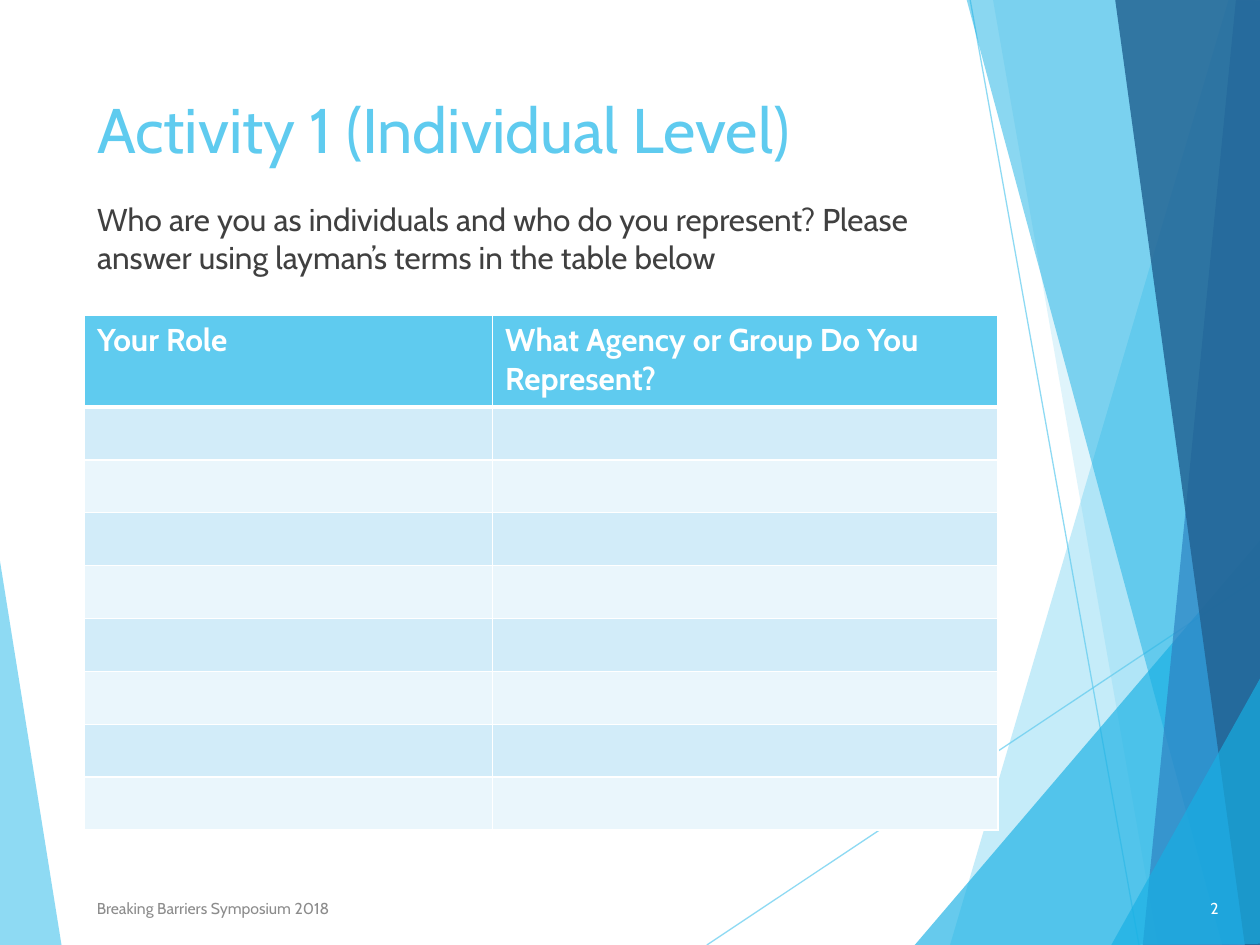
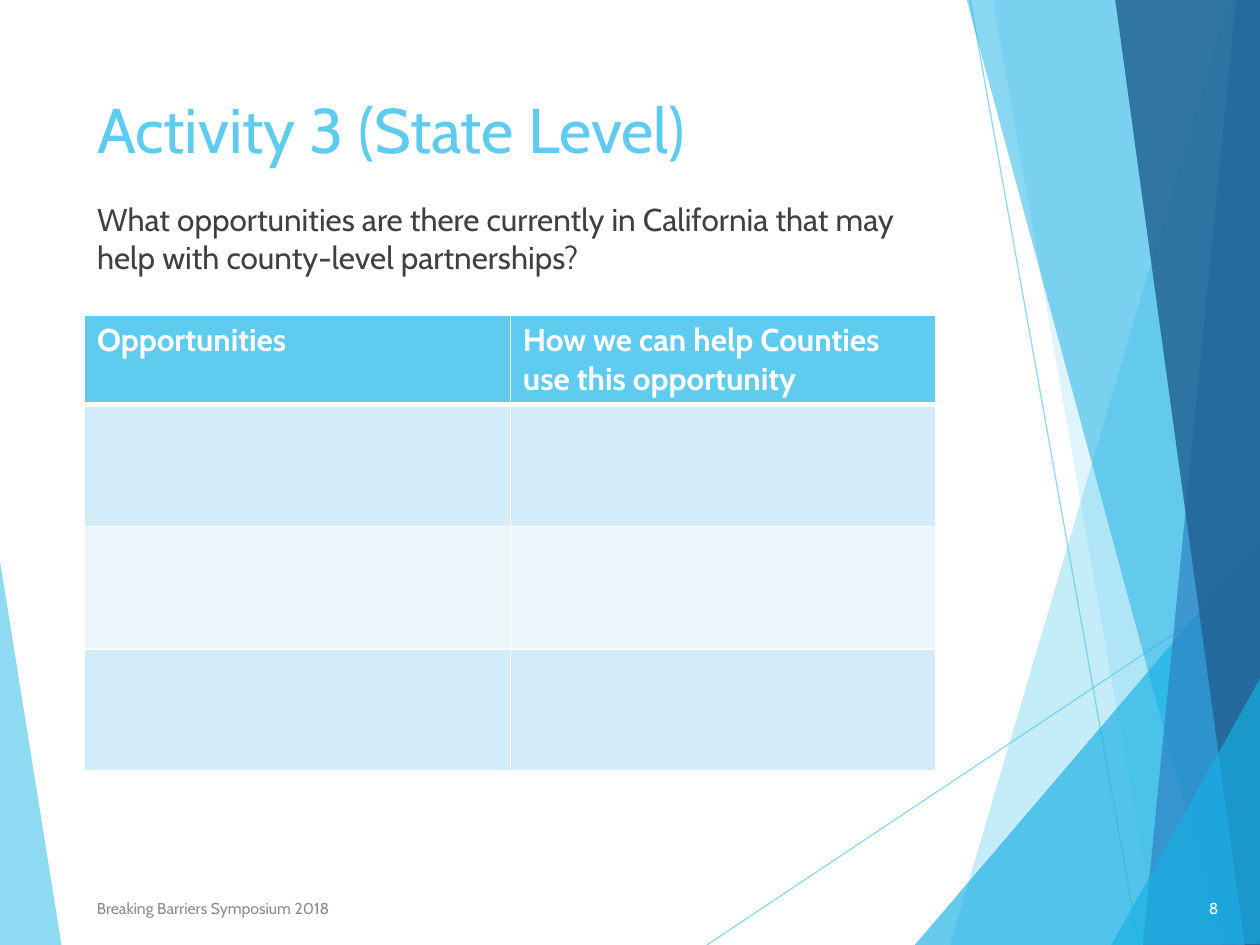
from lxml.etree import SubElement
from pptx import Presentation
from pptx.dml.color import RGBColor
from pptx.enum.text import MSO_ANCHOR as Anchor, MSO_AUTO_SIZE as AutoSize, PP_ALIGN as Align
from pptx.oxml.ns import qn
from pptx.util import Inches, Pt

COLORS = {
    "sky": "5FCBEF", "cyan": "17B0E4", "blue": "2E83C3", "navy": "226292",
    "white": "FFFFFF", "body": "404040", "footer": "8C8C8C",
    "odd_row": "D2ECF9", "even_row": "EAF6FC",
}
FORMATS = {
    "title": {"size": Pt(36), "color": "sky"},
    "body": {"size": Pt(18), "color": "body"},
    "header": {"size": Pt(18), "color": "white", "bold": True},
    "footer": {"size": Pt(9), "color": "footer"},
    "number": {"size": Pt(9), "color": "white"},
}
LEFT = 0.67

# Decorative bands, back to front: colour, opacity in percent, corners in inches
LEFT_BAND = ("sky", 70, [(-0.01, 4.39), (0.49, 7.51), (-0.01, 7.5)])
RIGHT_BANDS = [
    ("sky", 36, [(9.75, 0), (7.54, 7.5), (10.02, 7.51), (10.01, 0.01)]),
    ("sky", 20, [(7.88, -0.01), (9.19, 7.5), (10.01, 7.5), (10.01, -0.01)]),
    ("cyan", 66, [(7.26, 7.5), (10, 4.29), (10.01, 7.5)]),
    ("cyan", 50, [(7.67, -0.01), (9.7, 7.5), (10.01, 7.49), (10.01, -0.01)]),
    ("blue", 70, [(9.81, -0.01), (9.07, 7.5), (10.01, 7.5), (10, -0.01)]),
    ("navy", 82, [(8.85, -0.01), (9.88, 7.5), (10.02, 7.5), (10, -0.01)]),
    ("cyan", 66, [(8.82, 7.5), (10.02, 5.35), (10.02, 7.49)]),
]
THIN_LINES = [((5.61, 7.5), (10.01, 4.57)), ((7.7, 0), (9.04, 7.5))]

SLIDES = [
    {
        "title": "Activity 1 (Individual Level)",
        "number": "2",
        "question": "Who are you as individuals and who do you represent? "
                    "Please answer using layman’s terms in the table below",
        "headers": ["Your Role", "What Agency or Group Do You Represent?"],
        "columns": [3.24, 4.01],
        "rows": [0.73] + [0.42] * 8,
    },
    {
        "title": "Activity 3 (State Level)",
        "number": "8",
        "question": "What opportunities are there currently in California "
                    "that may help with county-level partnerships?",
        "headers": ["Opportunities", "How we can help Counties use this opportunity"],
        "columns": [3.38, 3.38],
        "rows": [0.68] + [0.97] * 3,
    },
]


def write(frame, text, style, align=Align.LEFT, anchor=Anchor.TOP):
    """Put one formatted paragraph in a text frame and return it."""
    frame.word_wrap = True
    frame.auto_size = AutoSize.NONE
    frame.vertical_anchor = anchor
    paragraph = frame.paragraphs[0]
    paragraph.alignment = align
    run = paragraph.add_run()
    run.text = text
    run.font.name = "Cabin"
    for name, value in FORMATS[style].items():
        if name == "color":
            run.font.color.rgb = RGBColor.from_string(COLORS[value])
        else:
            setattr(run.font, name, value)
    return paragraph


def paint(fill, color, opacity=100):
    """Make a fill solid, with an opacity in percent."""
    fill.solid()
    fill.fore_color.rgb = RGBColor.from_string(COLORS[color])
    if opacity < 100:
        for node in fill.fore_color._xFill.iter(qn("a:srgbClr")):
            SubElement(node, qn("a:alpha"), val=str(opacity * 1000))


presentation = Presentation()
presentation.slide_width, presentation.slide_height = Inches(10), Inches(7.5)

for content in SLIDES:
    slide = presentation.slides.add_slide(presentation.slide_layouts[1])
    shapes = slide.shapes
    title, body = slide.placeholders

    # Bands, with the thin lines just above the left one
    for index, (color, opacity, corners) in enumerate([LEFT_BAND] + RIGHT_BANDS):
        points = [(Inches(x), Inches(y)) for x, y in corners]
        builder = shapes.build_freeform(*points[0])
        builder.add_line_segments(points[1:], close=True)
        band = builder.convert_to_shape()
        band.shadow.inherit = False
        band.line.fill.background()
        paint(band.fill, color, opacity)
        if index == 0:
            for start, end in THIN_LINES:
                line = shapes.add_connector(1, *map(Inches, start + end))
                line.line.width = Pt(0.75)
                paint(line.line.fill, "sky", 70)
                SubElement(line.element.spPr, qn("a:effectLst"))

    # Title and question stand in front of the bands
    for placeholder, top, height in [(title, 0.67, 0.77), (body, 1.54, 0.89)]:
        placeholder.left, placeholder.top = Inches(LEFT), Inches(top)
        placeholder.width, placeholder.height = Inches(6.94), Inches(height)
        band.element.getparent().append(placeholder.element)
    write(title.text_frame, content["title"], "title")
    question = write(body.text_frame, content["question"], "body")
    question.space_before = Pt(10)
    properties = question._p.get_or_add_pPr()
    properties.set("marL", "0")
    properties.set("indent", "0")
    SubElement(properties, qn("a:buNone"))

    # Footer and slide number
    for left, width, text, style, align in [
        (LEFT, 5.06, "Breaking Barriers Symposium 2018", "footer", Align.LEFT),
        (9.21, 0.56, content["number"], "number", Align.RIGHT),
    ]:
        box = shapes.add_textbox(Inches(left), Inches(7.01), Inches(width), Inches(0.4))
        write(box.text_frame, text, style, align, Anchor.MIDDLE)

    # Answer table
    columns, rows = content["columns"], content["rows"]
    table = shapes.add_table(
        len(rows), len(columns), Inches(LEFT), Inches(2.5),
        Inches(sum(columns)), Inches(sum(rows)),
    ).table
    for column, width in zip(table.columns, columns):
        column.width = Inches(width)
    for row_index, (row, height) in enumerate(zip(table.rows, rows)):
        row.height = Inches(height)
        for column_index, cell in enumerate(row.cells):
            cell_properties = cell._tc.get_or_add_tcPr()
            for side in ("lnL", "lnR", "lnT", "lnB"):
                under_header = (row_index, side) in [(0, "lnB"), (1, "lnT")]
                border = SubElement(cell_properties, qn(f"a:{side}"),
                                    w=str(Pt(3 if under_header else 1)))
                border_fill = SubElement(border, qn("a:solidFill"))
                SubElement(border_fill, qn("a:srgbClr"), val=COLORS["white"])
            if row_index == 0:
                paint(cell.fill, "sky")
                paragraph = cell.text_frame.paragraphs[0]
                write(cell.text_frame, content["headers"][column_index], "header")
            else:
                paint(cell.fill, "odd_row" if row_index % 2 else "even_row")

presentation.save("out.pptx")
